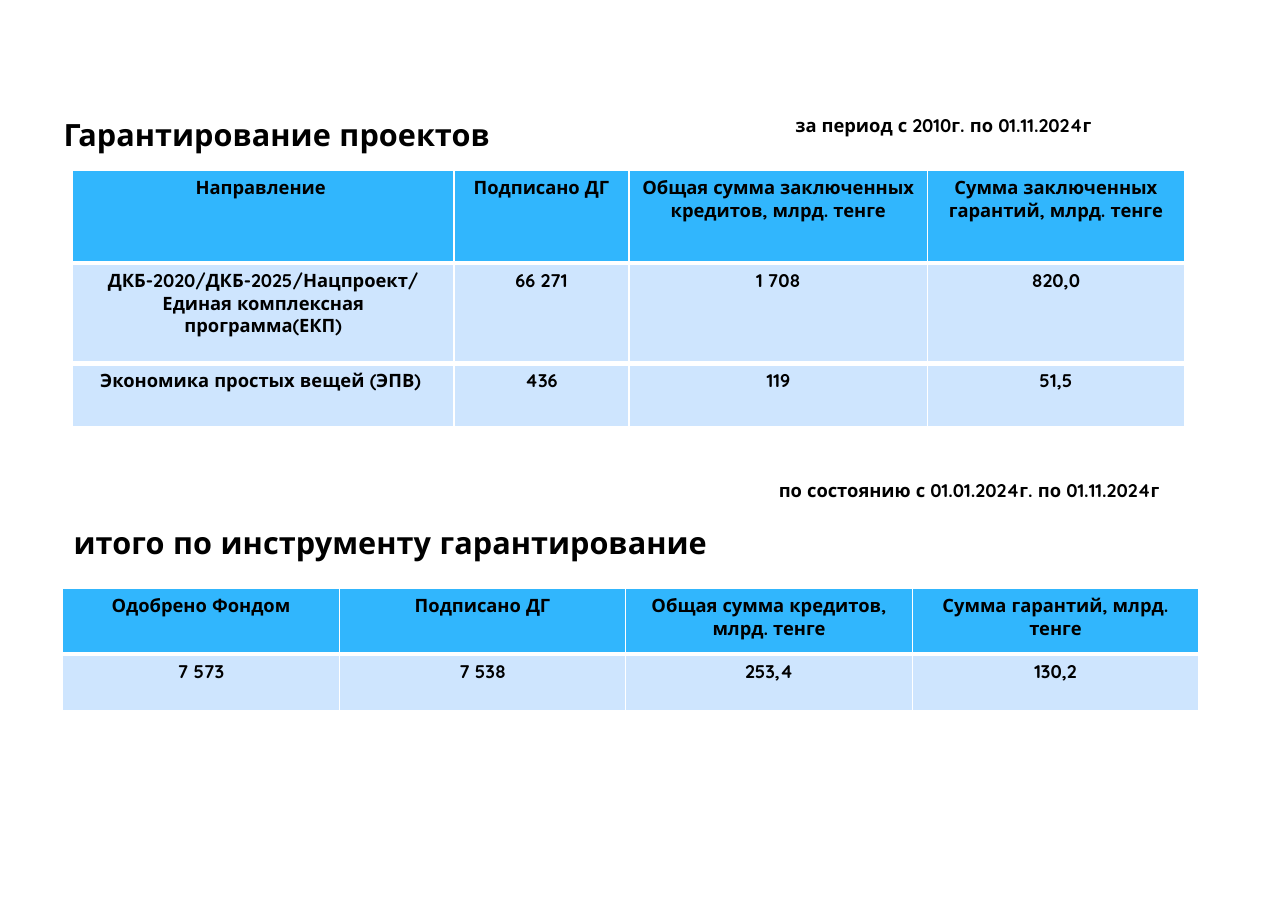
from lxml.etree import SubElement
from pptx import Presentation
from pptx.dml.color import RGBColor
from pptx.enum.text import MSO_AUTO_SIZE, PP_ALIGN
from pptx.oxml.ns import qn
from pptx.util import Emu, Pt

EMU_PER_PX = 9144
BLACK, WHITE = "000000", "FFFFFF"
HEADER_FILL, BODY_FILL = "31B6FD", "CEE5FE"
THIN, THICK = 1, 3

LABELS = [
    ("за период с 2010г. по 01.11.2024г", (712, 99, 363, 30), 12),
    ("Гарантирование проектов", (48, 100, 724, 44), 20),
    ("итого по инструменту гарантирование", (57, 471, 702, 44), 20),
    ("по состоянию с 01.01.2024г. по 01.11.2024г", (697, 430, 394, 30), 12),
]
PROGRAMS = [
    ["Направление ", "Подписано ДГ", "Общая сумма заключенных кредитов, млрд. тенге",
     "Сумма заключенных гарантий, млрд. тенге"],
    ["ДКБ-2020/ДКБ-2025/Нацпроект/ Единая комплексная программа(ЕКП)",
     "66 271", "1 708", "820,0"],
    ["Экономика простых вещей (ЭПВ) ", "436", "119", "51,5"],
]
TOTALS = [
    ["Одобрено Фондом", "Подписано ДГ", "Общая сумма кредитов, млрд. тенге",
     "Сумма гарантий, млрд. тенге"],
    ["7 573", "7 538", "253,4", "130,2"],
]


def px(length):
    """Turn whole pixels into EMU."""
    return Emu(length * EMU_PER_PX)


def colour(code):
    """Turn a hex string into a colour."""
    return RGBColor.from_string(code)


def write(text_frame, text, size, alignment):
    """Write one bold paragraph into a text frame."""
    paragraph = text_frame.paragraphs[0]
    paragraph.alignment = alignment
    run = paragraph.add_run()
    run.text = text
    font_format = {"name": "Quicksand", "size": Pt(size), "bold": True}
    for name, value in font_format.items():
        setattr(run.font, name, value)
    run.font.color.rgb = colour(BLACK)


def add_label(slide, text, box, size):
    """Add a text box that grows with its text."""
    text_frame = slide.shapes.add_textbox(*map(px, box)).text_frame
    text_frame.word_wrap = True
    text_frame.auto_size = MSO_AUTO_SIZE.SHAPE_TO_FIT_TEXT
    write(text_frame, text, size, PP_ALIGN.LEFT)


def set_borders(cell, top, bottom):
    """Give a cell white borders with thin sides."""
    properties = cell._tc.get_or_add_tcPr()
    widths = {"a:lnL": THIN, "a:lnR": THIN, "a:lnT": top, "a:lnB": bottom}
    for tag, width in widths.items():
        line = SubElement(properties, qn(tag), w=str(Pt(width)))
        fill = SubElement(line, qn("a:solidFill"))
        SubElement(fill, qn("a:srgbClr"), val=WHITE)


def add_grid(slide, rows, corner, widths, heights, bottom):
    """Add a table with a header row and light body rows."""
    size = (sum(widths), sum(heights))
    frame = slide.shapes.add_table(len(rows), len(widths), *map(px, corner + size))
    table = frame.table
    table.first_row = table.horz_banding = False
    for column, width in zip(table.columns, widths):
        column.width = px(width)
    for row, height in zip(table.rows, heights):
        row.height = px(height)
    for row_index, texts in enumerate(rows):
        top_width = THICK if row_index else THIN
        bottom_width = bottom if row_index == len(rows) - 1 else THICK
        for column_index, text in enumerate(texts):
            cell = table.cell(row_index, column_index)
            set_borders(cell, top_width, bottom_width)
            cell.fill.solid()
            cell.fill.fore_color.rgb = colour(BODY_FILL if row_index else HEADER_FILL)
            write(cell.text_frame, text, 12, PP_ALIGN.CENTER)


def main():
    """Build the guarantee slide and save it."""
    presentation = Presentation()
    presentation.slide_width, presentation.slide_height = px(1169), px(827)
    slide = presentation.slides.add_slide(presentation.slide_layouts[6])
    for text, box, size in LABELS:
        add_label(slide, text, box, size)
    add_grid(slide, PROGRAMS, (66, 155), [346, 159, 271, 233], [84, 91, 59], THICK)
    add_grid(slide, TOTALS, (57, 534), [251, 260, 260, 260], [60, 51], THIN)
    presentation.save("out.pptx")


if __name__ == "__main__":
    main()
